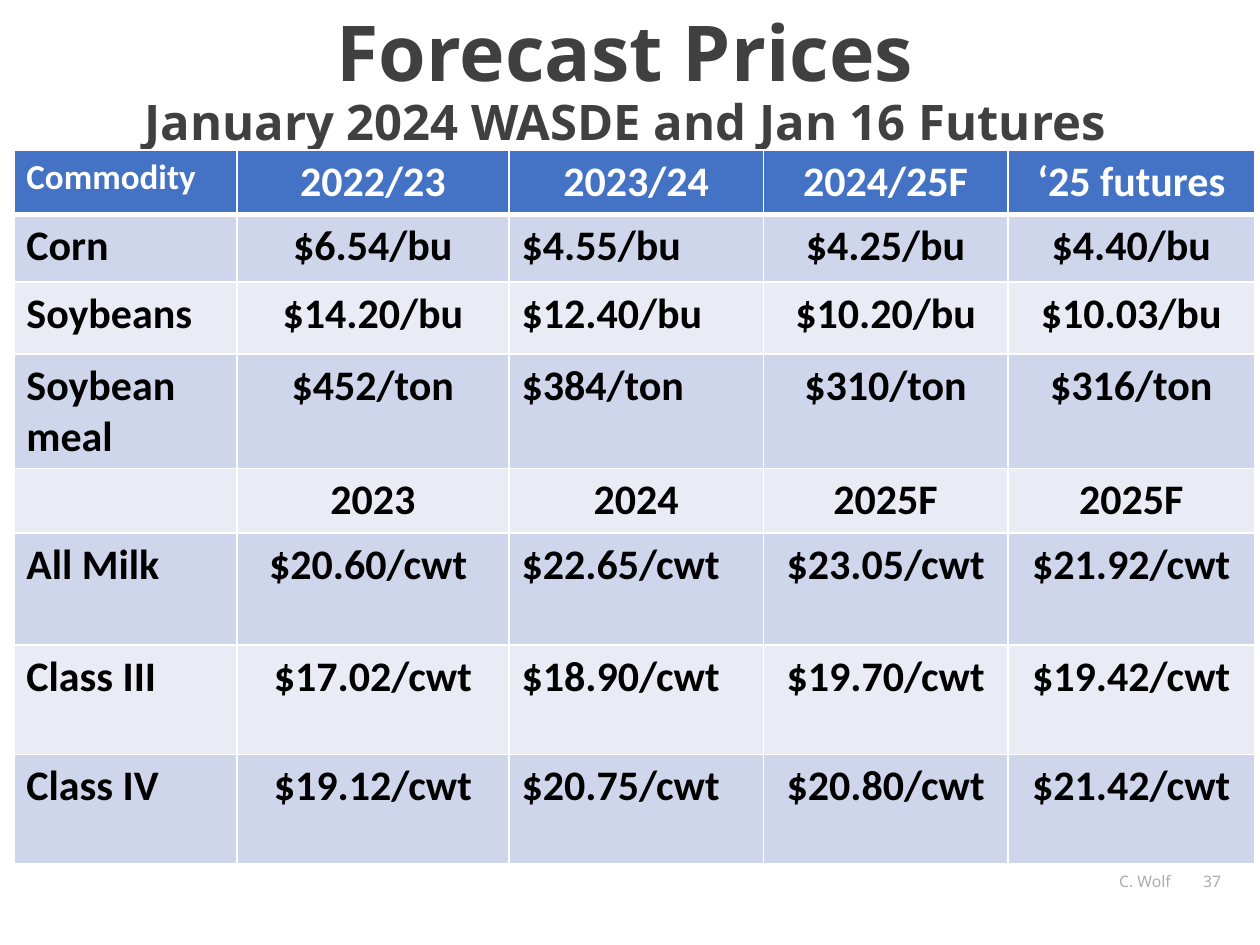
from lxml import etree
from pptx import Presentation
from pptx.dml.color import RGBColor
from pptx.enum.shapes import MSO_CONNECTOR
from pptx.enum.text import MSO_ANCHOR, PP_ALIGN
from pptx.oxml.ns import qn
from pptx.util import Inches, Pt

LEFT, CENTER, RIGHT = PP_ALIGN.LEFT, PP_ALIGN.CENTER, PP_ALIGN.RIGHT
TOP, BOTTOM = MSO_ANCHOR.TOP, MSO_ANCHOR.BOTTOM
STRAIGHT = MSO_CONNECTOR.STRAIGHT

COLORS = {
    "title": "404040",
    "footer": "AFABAB",
    "header": "4472C4",
    "odd_row": "CFD5EA",
    "even_row": "E9EBF5",
    "white": "FFFFFF",
    "black": "000000",
}

COLUMN_WIDTHS = [1.77, 2.16, 2.02, 1.94, 1.96]
ROW_HEIGHTS = [0.51, 0.54, 0.57, 0.91, 0.51, 0.89, 0.87, 0.87]
PRICES = [
    ["Commodity", "2022/23", "2023/24", "2024/25F", "‘25 futures"],
    ["Corn", "$6.54/bu", "$4.55/bu", "$4.25/bu", "$4.40/bu"],
    ["Soybeans", "$14.20/bu", "$12.40/bu", "$10.20/bu", "$10.03/bu"],
    ["Soybean meal", "$452/ton", "$384/ton", "$310/ton", "$316/ton"],
    ["", "2023", "2024", "2025F", "2025F"],
    ["All Milk", "$20.60/cwt ", "$22.65/cwt", "$23.05/cwt", "$21.92/cwt"],
    ["Class III", "$17.02/cwt", "$18.90/cwt", "$19.70/cwt", "$19.42/cwt"],
    ["Class IV", "$19.12/cwt", "$20.75/cwt", "$20.80/cwt", "$21.42/cwt"],
]
YEAR_ROWS = (0, 4)
LEFT_PRICE_COLUMN = 2


def format_font(font, color, **values):
    for name, value in values.items():
        setattr(font, name, value)
    font.color.rgb = RGBColor.from_string(COLORS[color])


def add_text_box(slide, left, top, width, height, align, anchor):
    """Add an empty wrapping text box and return its first paragraph."""
    frame = slide.shapes.add_textbox(
        Inches(left), Inches(top), Inches(width), Inches(height)).text_frame
    frame.word_wrap = True
    frame.vertical_anchor = anchor
    paragraph = frame.paragraphs[0]
    paragraph.alignment = align
    return paragraph


def add_run(paragraph, text, color, **values):
    run = paragraph.add_run()
    run.text = text
    format_font(run.font, color, **values)


def add_footer_rule(slide):
    rule = slide.shapes.add_connector(
        STRAIGHT, Inches(0.25), Inches(6.68), Inches(9.79), Inches(6.68))
    rule.line.width = Pt(0.5)
    rule.line.color.rgb = RGBColor.from_string(COLORS["footer"])
    properties = rule._element.spPr
    color = properties.find(".//" + qn("a:srgbClr"))
    etree.SubElement(color, qn("a:alpha"), val="75000")
    etree.SubElement(properties, qn("a:effectLst"))


def add_title(slide):
    title = add_text_box(slide, 0.47, 0, 8.98, 1.25, CENTER, BOTTOM)
    title.line_spacing = 0.9
    style = {"name": "Noto Sans", "bold": True}
    add_run(title, "Forecast Prices", "title", size=Pt(44), **style)
    title.add_line_break()
    add_run(title, "January 2024 WASDE and Jan 16 Futures", "title",
            size=Pt(28), **style)


def add_footer(slide, text, left, width):
    footer = add_text_box(slide, left, 6.87, width, 0.4, RIGHT, TOP)
    add_run(footer, text, "footer", name="Noto Sans", size=Pt(9))


def set_borders(cell, bottom_width):
    """Draw white borders; call before filling the cell."""
    properties = cell._tc.get_or_add_tcPr()
    widths = {"lnL": 1, "lnR": 1, "lnT": 1, "lnB": bottom_width}
    for side, width in widths.items():
        line = etree.SubElement(properties, qn(f"a:{side}"), w=str(Pt(width)))
        fill = etree.SubElement(line, qn("a:solidFill"))
        etree.SubElement(fill, qn("a:srgbClr"), val=COLORS["white"])


def price_alignment(row, column):
    if column == 0 or (column == LEFT_PRICE_COLUMN and row not in YEAR_ROWS):
        return LEFT
    return CENTER


def format_cell(cell, row, column):
    is_header = row == 0
    set_borders(cell, 3 if is_header else 1)
    band = "header" if is_header else "odd_row" if row % 2 else "even_row"
    cell.fill.solid()
    cell.fill.fore_color.rgb = RGBColor.from_string(COLORS[band])
    paragraph = cell.text_frame.paragraphs[0]
    paragraph.alignment = price_alignment(row, column)
    if PRICES[row][column]:
        size = 20 if is_header and column == 0 else 24
        add_run(paragraph, PRICES[row][column],
                "white" if is_header else "black",
                name="Calibri", size=Pt(size), bold=True)


def add_price_table(slide):
    table = slide.shapes.add_table(
        len(ROW_HEIGHTS), len(COLUMN_WIDTHS), Inches(0.11), Inches(1.19),
        Inches(sum(COLUMN_WIDTHS)), Inches(sum(ROW_HEIGHTS))).table
    for column, width in zip(table.columns, COLUMN_WIDTHS):
        column.width = Inches(width)
    for row, height in zip(table.rows, ROW_HEIGHTS):
        row.height = Inches(height)
    for row in range(len(ROW_HEIGHTS)):
        for column in range(len(COLUMN_WIDTHS)):
            format_cell(table.cell(row, column), row, column)


def main():
    presentation = Presentation()
    presentation.slide_width = Inches(10)
    presentation.slide_height = Inches(7.5)
    slide = presentation.slides.add_slide(presentation.slide_layouts[6])
    add_footer_rule(slide)
    add_title(slide)
    add_price_table(slide)
    add_footer(slide, "C. Wolf", 4.35, 5.04)
    add_footer(slide, "37", 9.39, 0.4)
    presentation.save("out.pptx")


if __name__ == "__main__":
    main()
